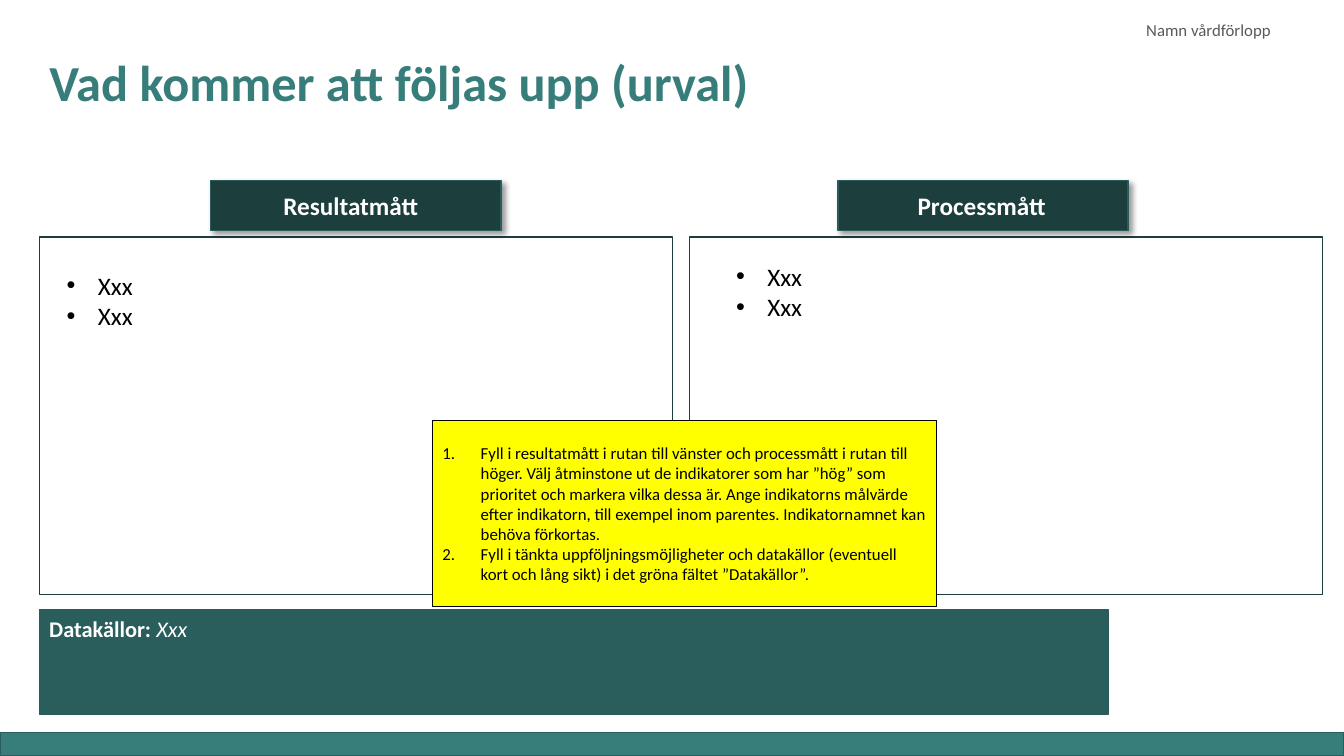
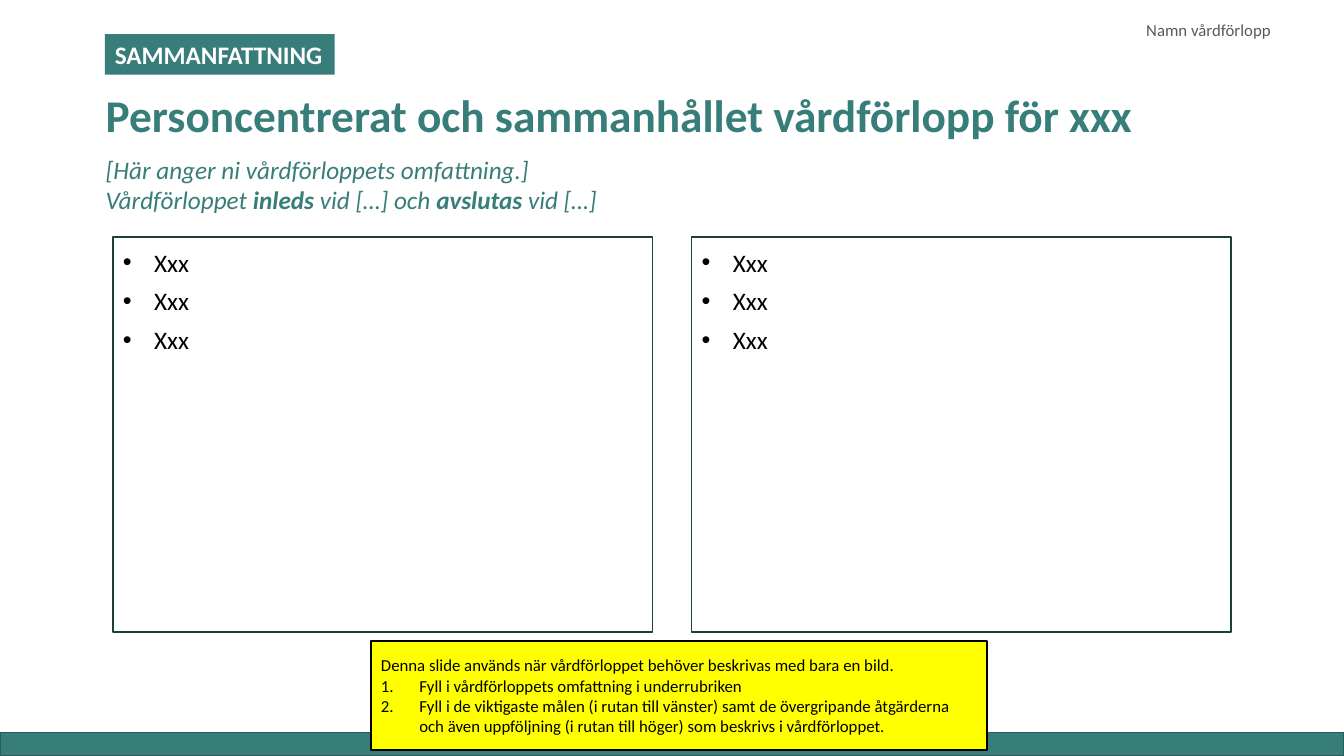
import pptx
import pptx.dml.color
import pptx.enum.shapes
import pptx.enum.text
import pptx.oxml
import pptx.oxml.ns
import pptx.util
from dataclasses import dataclass
from lxml import etree

Inches, Pt = pptx.util.Inches, pptx.util.Pt
ANCHORS = pptx.enum.text.MSO_ANCHOR


@dataclass(frozen=True)
class Theme:
    font: str = "Calibri"
    teal: str = "377D7A"
    deep: str = "295E5C"
    edge: str = "295C5A"
    dark: str = "1C3E3D"
    note: str = "FFFF00"
    black: str = "000000"
    white: str = "FFFFFF"
    grey: str = "595959"
    title: float = 36
    summary_title: float = 32.4
    body: float = 18
    source: float = 16
    small: float = 12


THEME = Theme()
WIDTH, HEIGHT = 13.33, 7.5
PANEL_TOP = 2.35
BAND_WIDTH, BAND_HEIGHT = 2.88, 0.5

# Content: a paragraph is a string or a list of (text, style) runs; styles are "b" and "i"
PATHWAY = "Namn vårdförlopp"

FOLLOW_UP = {
    "title": "Vad kommer att följas upp (urval)",
    # heading, shift of its band from the panel centre, heading inset, items, panel insets
    "measures": [
        ("Resultatmått", 0, 0.72, ["Xxx"] * 2, (0.27, 0.33)),
        ("Processmått", -0.23, 0.79, ["Xxx"] * 2, (0.46, 0.24)),
    ],
    "sources": [[("Datakällor: ", "b"), ("Xxx", "i")]],
    "steps": [
        "Fyll i resultatmått i rutan till vänster och processmått i rutan till höger. "
        "Välj åtminstone ut de indikatorer som har ”hög” som prioritet och markera vilka "
        "dessa är. Ange indikatorns målvärde efter indikatorn, till exempel inom parentes. "
        "Indikatornamnet kan behöva förkortas.",
        "Fyll i tänkta uppföljningsmöjligheter och datakällor (eventuell kort och lång "
        "sikt) i det gröna fältet ”Datakällor”.",
    ],
}

SUMMARY = {
    "tag": "SAMMANFATTNING",
    "title": "Personcentrerat och sammanhållet vårdförlopp för xxx",
    "scope": [
        "[Här anger ni vårdförloppets omfattning.]",
        [("Vårdförloppet ", ""), ("inleds", "b"), (" vid […] och ", ""),
         ("avslutas", "b"), (" vid […]", "")],
    ],
    "panels": [["Xxx"] * 3, ["Xxx"] * 3],
    "intro": "Denna slide används när vårdförloppet behöver beskrivas med bara en bild.",
    "steps": [
        "Fyll i vårdförloppets omfattning i underrubriken",
        "Fyll i de viktigaste målen (i rutan till vänster) samt de övergripande åtgärderna "
        "och även uppföljning (i rutan till höger) som beskrivs i vårdförloppet.",
    ],
}


def rgb(value):
    return pptx.dml.color.RGBColor.from_string(value)


def add_child(parent, tag, **attributes):
    child = etree.SubElement(parent, pptx.oxml.ns.qn(tag))
    for name, value in attributes.items():
        child.set(name, str(value))
    return child


def add_marker(paragraph, marker):
    """Hang a bullet or an automatic number in front of the paragraph."""
    indent = Inches(0.31 if marker == "bullet" else 0.38)
    properties = paragraph._p.get_or_add_pPr()
    properties.set("marL", str(indent))
    properties.set("indent", str(-indent))
    if marker == "bullet":
        add_child(properties, "a:buFont", typeface="Arial")
        add_child(properties, "a:buChar", char="•")
    else:
        add_child(properties, "a:buAutoNum", type="arabicPeriod")


def write(shape, paragraphs, size, color=THEME.black, bold=None, italic=None, marker=None,
          unmarked=0, anchor=ANCHORS.TOP, insets=(0.1, 0.05), spacing=None, before=0):
    """Fill a shape with text; the first `unmarked` paragraphs get no marker."""
    frame = shape.text_frame
    frame.word_wrap = True
    frame.vertical_anchor = anchor
    frame.margin_left, frame.margin_top = map(Inches, insets)
    frame.margin_right, frame.margin_bottom = Inches(0.1), Inches(0.05)
    for index, content in enumerate(paragraphs):
        paragraph = frame.paragraphs[0] if index == 0 else frame.add_paragraph()
        paragraph.alignment = pptx.enum.text.PP_ALIGN.LEFT
        if marker and index >= unmarked:
            add_marker(paragraph, marker)
        if spacing:
            paragraph.line_spacing = spacing
        if before and index:
            paragraph.space_before = Pt(before)
        font = paragraph.font
        font.name, font.size = THEME.font, Pt(size)
        font.bold, font.italic = bold, italic
        font.color.rgb = rgb(color)
        runs = [(content, "")] if isinstance(content, str) else content
        for text, style in runs:
            run = paragraph.add_run()
            run.text = text
            if "b" in style:
                run.font.bold = True
            if "i" in style:
                run.font.italic = True


def add_box(slide, left, top, width, height, fill, line=None):
    shape = slide.shapes.add_shape(pptx.enum.shapes.MSO_SHAPE.RECTANGLE,
                                   *map(Inches, (left, top, width, height)))
    shape.shadow.inherit = False
    shape.fill.solid()
    shape.fill.fore_color.rgb = rgb(fill)
    if line:
        shape.line.color.rgb = rgb(line)
        shape.line.width = Pt(1)
    else:
        shape.line.fill.background()
    return shape


def add_text(slide, left, top, width, height, paragraphs, size, **style):
    box = slide.shapes.add_textbox(*map(Inches, (left, top, width, height)))
    write(box, paragraphs, size, **style)


def add_title(slide, left, top, text, size):
    add_text(slide, left, top, 10.41, 0.67, [text], size, color=THEME.teal, bold=True,
             anchor=ANCHORS.BOTTOM, spacing=0.9)


def add_note(slide, left, top, width, height, paragraphs, unmarked=0):
    note = add_box(slide, left, top, width, height, THEME.note, THEME.black)
    write(note, paragraphs, THEME.small, marker="number", unmarked=unmarked,
          anchor=ANCHORS.MIDDLE)


def add_panels(slide, left, width, gap, height, count=2):
    """Place equal outlined panels in a row."""
    return [add_box(slide, left + column * (width + gap), PANEL_TOP, width, height,
                    THEME.white, THEME.dark) for column in range(count)]


def add_drop_shadow(shape):
    effects = shape.element.spPr.find(pptx.oxml.ns.qn("a:effectLst"))
    shadow = add_child(effects, "a:outerShdw", blurRad=Pt(4), dist=Pt(3),
                       dir=45 * 60000, algn="tl", rotWithShape=0)
    color = add_child(shadow, "a:srgbClr", val=THEME.black)
    add_child(color, "a:alpha", val=40000)


def new_slide(presentation):
    """Start a slide with the shared footer band and pathway label."""
    slide = presentation.slides.add_slide(presentation.slide_layouts[6])
    add_box(slide, 0, HEIGHT - 0.23, WIDTH, 0.23, THEME.teal, THEME.edge)
    add_text(slide, 11.27, 0.15, 1.7, 0.3, [PATHWAY], THEME.small, color=THEME.grey)
    return slide


def build_follow_up(presentation):
    slide = new_slide(presentation)
    left, width, gap = 0.39, 6.28, 0.17
    add_title(slide, left, 0.49, FOLLOW_UP["title"], THEME.title)

    # Measure panels with a heading band above each
    panels = add_panels(slide, left, width, gap, 3.55)
    for column, (panel, measure) in enumerate(zip(panels, FOLLOW_UP["measures"])):
        heading, shift, heading_inset, items, insets = measure
        write(panel, items, THEME.body, marker="bullet", insets=insets)
        band_left = left + column * (width + gap) + (width - BAND_WIDTH) / 2 + shift
        band = add_box(slide, band_left, 1.79, BAND_WIDTH, BAND_HEIGHT, THEME.dark, THEME.edge)
        add_drop_shadow(band)
        write(band, [heading], THEME.body, color=THEME.white, bold=True,
              anchor=ANCHORS.MIDDLE, insets=(heading_inset, 0.05))

    # Data sources and instructions
    sources = add_box(slide, left, 6.05, 10.6, 1.04, THEME.deep, THEME.edge)
    write(sources, FOLLOW_UP["sources"], THEME.source, color=THEME.white)
    add_note(slide, 4.29, 4.17, 5, 1.85, FOLLOW_UP["steps"])


def build_summary(presentation):
    slide = new_slide(presentation)

    # Tag, title and scope
    tag = add_box(slide, 1.04, 0.34, 2.28, 0.4, THEME.teal)
    write(tag, [SUMMARY["tag"]], THEME.body, color=THEME.white, bold=True)
    add_title(slide, 0.95, 0.79, SUMMARY["title"], THEME.summary_title)
    add_text(slide, 0.95, 1.48, 11.27, 0.71, SUMMARY["scope"], THEME.body,
             color=THEME.teal, italic=True)

    # Goal and action panels, then instructions
    for panel, items in zip(add_panels(slide, 1.12, 5.35, 0.39, 3.92), SUMMARY["panels"]):
        write(panel, items, THEME.body, marker="bullet", insets=(0.1, 0.1), before=6)
    add_note(slide, 3.68, 6.36, 6.11, 1.08, [SUMMARY["intro"], *SUMMARY["steps"]], unmarked=1)


def main():
    presentation = pptx.Presentation()
    presentation.slide_width, presentation.slide_height = Inches(WIDTH), Inches(HEIGHT)
    build_follow_up(presentation)
    build_summary(presentation)
    presentation.save("out.pptx")


if __name__ == "__main__":
    main()
